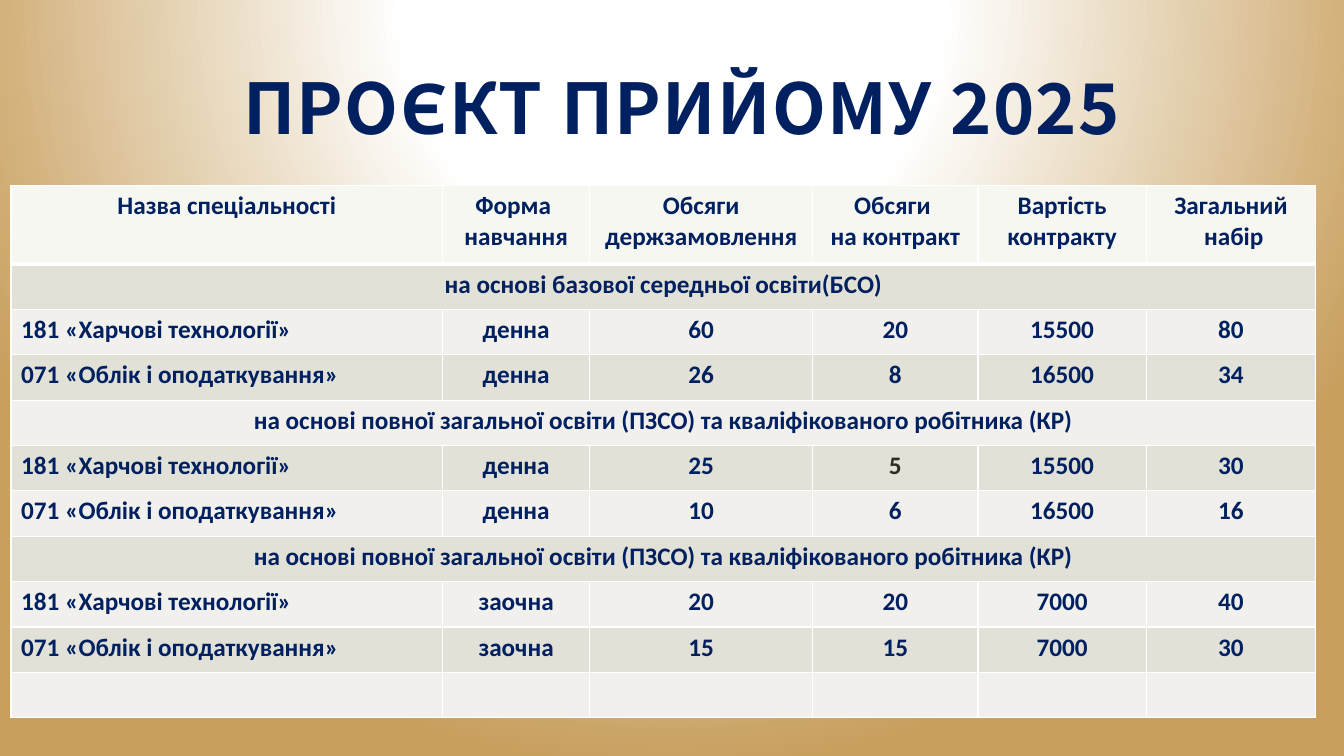
from pptx import Presentation, oxml, util as u
from pptx.dml.color import RGBColor
from pptx.enum import text
from pptx.oxml.ns import nsdecls, qn

HUES = {"ink": "002060", "dark": "2E2B21", "line": "FFFFFF", "glow": "FFFFFF",
        "gold": "C89F5D", "head": "F7F7F2", "even": "F1F0EC", "odd": "E2E1D7"}
COLS = [4.28, 1.46, 2.21, 1.64, 1.67, 1.68]
HEAD_H, ROW_H = 0.78, 0.45
FOOD, BOOKS = "181 «Харчові технології»", "071 «Облік і оподаткування»"
FULL = "на основі повної загальної освіти (ПЗСО) та кваліфікованого робітника (КР)"
# A row with a single entry spans the whole table.
ROWS = [
    ["Назва спеціальності", "Форма \nнавчання", "Обсяги держзамовлення",
     "Обсяги \nна контракт", "Вартість контракту", "Загальний\n набір"],
    ["на основі базової середньої освіти(БСО)"],
    [FOOD, "денна", "60", "20", "15500", "80"],
    [BOOKS, "денна", "26", "8", "16500", "34"],
    [FULL],
    [FOOD, "денна", "25", "5", "15500", "30"],
    [BOOKS, "денна", "10", "6", "16500", "16"],
    [FULL],
    [FOOD, "заочна", "20", "20", "7000", "40"],
    [BOOKS, "заочна", "15", "15", "7000", "30"],
    [""] * len(COLS),
]
DARK_CELL = (5, 3)


class Deck:
    def __init__(self, font, size):
        self.font, self.size = font, size
        self.prs = Presentation()
        self.prs.slide_width = u.Inches(13.33)
        self.prs.slide_height = u.Inches(7.5)
        self.slide = self.prs.slides.add_slide(self.prs.slide_layouts[5])

    def style(self, para, font, size, hue, align):
        para.alignment = align
        for run in para.runs:
            run.font.name, run.font.size, run.font.bold = font, u.Pt(size), True
            run.font.color.rgb = RGBColor.from_string(HUES[hue])

    def backdrop(self):
        """Radial glow centred above the slide."""
        self.slide.background.fill.solid()
        plain = self.slide.element.find(".//" + qn("p:bgPr")).find(qn("a:solidFill"))
        stops = "".join(
            f'<a:gs pos="{pos * 1000}"><a:srgbClr val="{HUES[hue]}"/></a:gs>'
            for pos, hue in [(0, "glow"), (35, "glow"), (100, "gold")])
        plain.getparent().replace(plain, oxml.parse_xml(
            f'<a:gradFill rotWithShape="1" {nsdecls("a")}><a:gsLst>{stops}</a:gsLst>'
            '<a:path path="circle"><a:fillToRect l="50000" t="-80000" '
            'r="50000" b="180000"/></a:path></a:gradFill>'))

    def title(self, words, font, size, box):
        shape = self.slide.shapes.title
        shape.left, shape.top, shape.width, shape.height = map(u.Inches, box)
        shape.element.set("useBgFill", "1")
        frame = shape.text_frame
        frame.text = words
        frame.word_wrap = True
        frame.auto_size = text.MSO_AUTO_SIZE.NONE
        frame.vertical_anchor = text.MSO_ANCHOR.MIDDLE
        para = frame.paragraphs[0]
        para.line_spacing = 0.8
        self.style(para, font, size, "ink", text.PP_ALIGN.CENTER)
        para.runs[0].font._element.set("spc", "100")

    def border(self, cell, head):
        props = cell._tc.get_or_add_tcPr()
        for side in "LRTB":
            width = u.Pt(3 if head and side == "B" else 1)
            props.append(oxml.parse_xml(
                f'<a:ln{side} w="{width}" {nsdecls("a")}><a:solidFill>'
                f'<a:srgbClr val="{HUES["line"]}"/></a:solidFill></a:ln{side}>'))

    def table(self, rows, left, top):
        high = HEAD_H + ROW_H * (len(rows) - 1)
        grid = self.slide.shapes.add_table(
            len(rows), len(COLS), u.Inches(left), u.Inches(top),
            u.Inches(sum(COLS)), u.Inches(high)).table
        for col, wide in zip(grid.columns, COLS):
            col.width = u.Inches(wide)
        for i, row in enumerate(rows):
            grid.rows[i].height = u.Inches(ROW_H if i else HEAD_H)
            band = ("odd" if i % 2 else "even") if i else "head"
            for j in range(len(COLS)):
                cell = grid.cell(i, j)
                self.border(cell, i == 0)
                cell.fill.solid()
                cell.fill.fore_color.rgb = RGBColor.from_string(HUES[band])
            if len(row) == 1:
                grid.cell(i, 0).merge(grid.cell(i, len(COLS) - 1))
            for j, words in enumerate(row):
                name = j == 0 and i > 0 and len(row) > 1
                align = text.PP_ALIGN.LEFT if name else text.PP_ALIGN.CENTER
                hue = "dark" if (i, j) == DARK_CELL else "ink"
                frame = grid.cell(i, j).text_frame
                frame.text = words
                for para in frame.paragraphs:
                    self.style(para, self.font, self.size, hue, align)


def main():
    deck = Deck("Calibri", 18)
    deck.backdrop()
    deck.title("ПРОЄКТ ПРИЙОМУ 2025", "Noto Sans CJK KR", 50, (0.48, 0.64, 12.57, 0.98))
    deck.table(ROWS, 0.11, 1.84)
    deck.prs.save("out.pptx")


if __name__ == "__main__":
    main()
